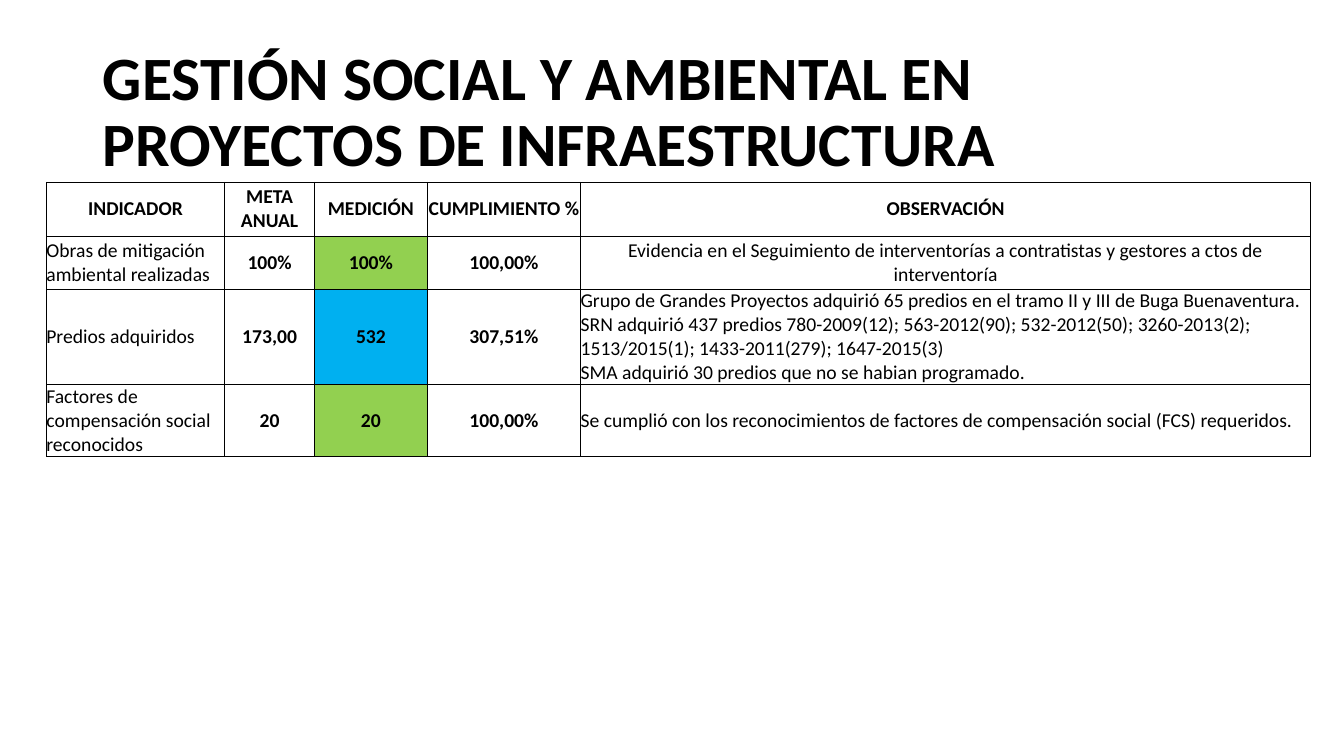
from pptx import Presentation
from pptx.dml.color import RGBColor
from pptx.enum.text import MSO_ANCHOR, MSO_AUTO_SIZE, PP_ALIGN
from pptx.oxml import parse_xml
from pptx.oxml.ns import nsdecls
from pptx.util import Inches, Pt

LEFT, CENTER = PP_ALIGN.LEFT, PP_ALIGN.CENTER
MIDDLE = MSO_ANCHOR.MIDDLE
NO_AUTOFIT = MSO_AUTO_SIZE.NONE

BLACK = RGBColor(0x00, 0x00, 0x00)
WHITE = RGBColor(0xFF, 0xFF, 0xFF)
GOAL_MET = RGBColor(0x92, 0xD0, 0x50)
GOAL_EXCEEDED = RGBColor(0x00, 0xB0, 0xF0)

TITLE = "GESTIÓN SOCIAL Y AMBIENTAL EN PROYECTOS DE INFRAESTRUCTURA"
HEADERS = ["INDICADOR", "META ANUAL", "MEDICIÓN", "CUMPLIMIENTO %", "OBSERVACIÓN"]
# Each indicator: its five cells, measurement colour, observation alignment
INDICATORS = [
    (["Obras de mitigación ambiental realizadas", "100%", "100%", "100,00%",
      "Evidencia en el Seguimiento de interventorías a contratistas y gestores "
      "a ctos de interventoría"], GOAL_MET, CENTER),
    (["Predios adquiridos", "173,00", "532", "307,51%",
      "Grupo de Grandes Proyectos adquirió 65 predios en el tramo II y III de "
      "Buga Buenaventura.\n"
      "SRN adquirió 437 predios 780-2009(12); 563-2012(90); 532-2012(50); "
      "3260-2013(2); 1513/2015(1); 1433-2011(279); 1647-2015(3)\n"
      "SMA adquirió 30 predios que no se habian programado."], GOAL_EXCEEDED, LEFT),
    (["Factores de compensación social reconocidos", "20", "20", "100,00%",
      "Se cumplió con los reconocimientos de factores de compensación social "
      "(FCS) requeridos."], GOAL_MET, LEFT),
]
COLUMN_WIDTHS = [1.77, 0.89, 1.12, 1.52, 7.24]
ROW_HEIGHT = 0.53


def write(frame, text, size=14, bold=False, align=LEFT, line_spacing=None):
    """Fill a text frame with one paragraph; newlines become line breaks."""
    paragraph = frame.paragraphs[0]
    paragraph.text = text
    paragraph.alignment = align
    paragraph.line_spacing = line_spacing
    for run in paragraph.runs:
        run.font.name = "Calibri"
        run.font.size = Pt(size)
        run.font.bold = bold
        run.font.color.rgb = BLACK


def add_borders(cell, top):
    properties = cell._tc.get_or_add_tcPr()
    for side, width in (("L", 0.5), ("R", 0.5), ("T", top), ("B", 0.5)):
        properties.append(parse_xml(
            f'<a:ln{side} {nsdecls("a")} w="{Pt(width)}"><a:solidFill>'
            f'<a:srgbClr val="{BLACK}"/></a:solidFill></a:ln{side}>'))


def format_cell(cell, text, fill=None, top=0.5, **text_format):
    cell.margin_left = cell.margin_right = cell.margin_top = cell.margin_bottom = 0
    cell.vertical_anchor = MIDDLE
    add_borders(cell, top)
    if fill is None:
        cell.fill.background()
    else:
        cell.fill.solid()
        cell.fill.fore_color.rgb = fill
    write(cell.text_frame, text, **text_format)


def place_title(slide, left, top, width, height):
    title = slide.shapes.title
    title.left, title.top = Inches(left), Inches(top)
    title.width, title.height = Inches(width), Inches(height)
    frame = title.text_frame
    frame.word_wrap = True
    frame.auto_size = NO_AUTOFIT
    frame.vertical_anchor = MIDDLE
    write(frame, TITLE, size=44, bold=True, line_spacing=0.9)


def add_indicator_table(slide, left, top, width):
    row_count = len(INDICATORS) + 1
    table = slide.shapes.add_table(
        row_count, len(HEADERS), Inches(left), Inches(top),
        Inches(width), Inches(ROW_HEIGHT * row_count)).table
    table.first_row = table.horz_banding = False
    for column, share in zip(table.columns, COLUMN_WIDTHS):
        column.width = Inches(width * share / sum(COLUMN_WIDTHS))

    # Header row
    for index, header in enumerate(HEADERS):
        format_cell(table.cell(0, index), header, top=1, bold=True, align=CENTER)

    # Indicator rows: name, three figures, observation
    for row, (texts, status, observation_align) in enumerate(INDICATORS, start=1):
        fills = [WHITE, None, status, None, None]
        aligns = [LEFT, CENTER, CENTER, CENTER, observation_align]
        for index, (text, fill, align) in enumerate(zip(texts, fills, aligns)):
            format_cell(table.cell(row, index), text, fill=fill, align=align,
                        bold=1 <= index <= 3)


def main():
    presentation = Presentation()
    presentation.slide_width = Inches(13.33)
    presentation.slide_height = Inches(7.5)
    slide = presentation.slides.add_slide(presentation.slide_layouts[5])
    place_title(slide, 0.92, 0.4, 11.5, 1.45)
    add_indicator_table(slide, 0.46, 1.81, 12.54)
    presentation.save("out.pptx")


if __name__ == "__main__":
    main()
